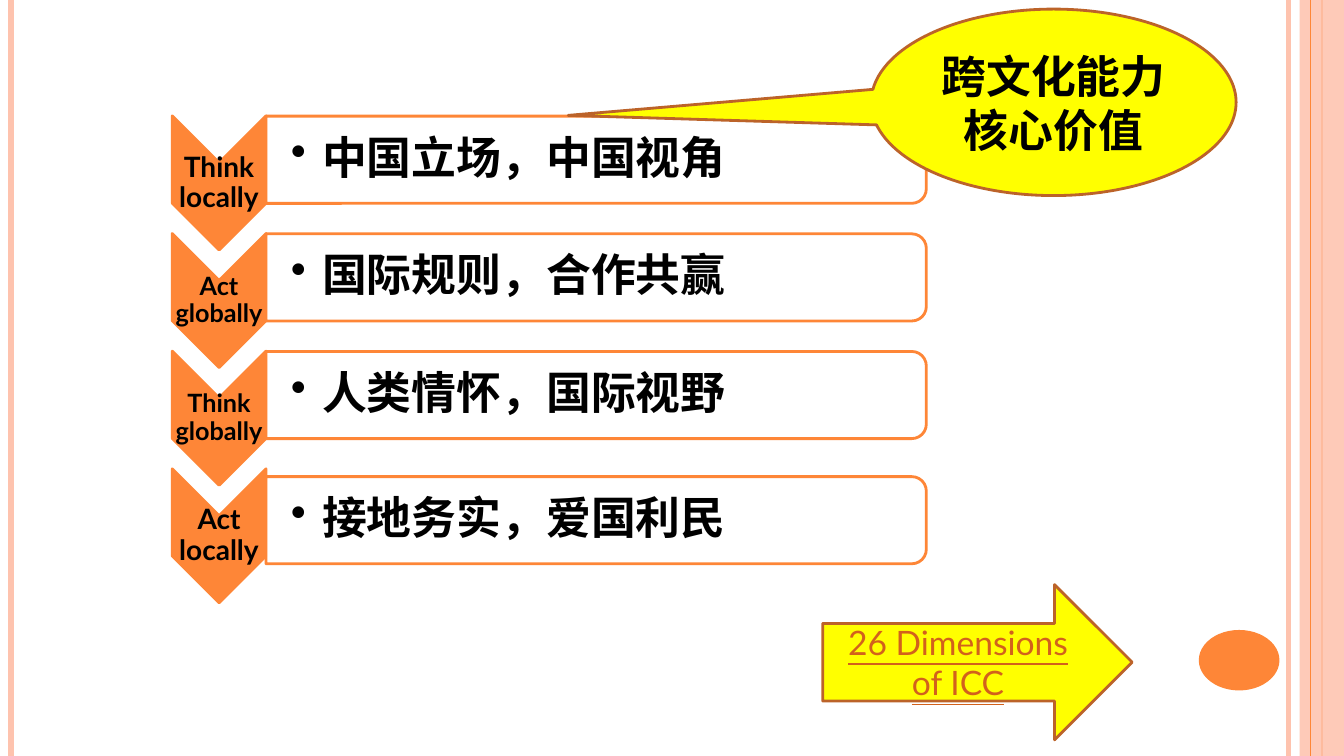
"""Build a slide of four think/act principles with a callout and an arrow."""
from lxml import etree
from pptx import Presentation
from pptx import util as u
from pptx.dml.color import RGBColor
from pptx.enum import shapes, text
from pptx.oxml.ns import qn

COLORS = {
    "orange": "FE8637", "peach": "FEC3AE", "white": "FFFFFF", "yellow": "FFFF00",
    "brown": "BC6329", "rust": "D2611C", "black": "000000",
}
CJK = "Noto Sans CJK SC"
KIND = shapes.MSO_SHAPE

deck = Presentation()
deck.slide_width, deck.slide_height = u.Inches(13.33), u.Inches(7.5)
page = deck.slides.add_slide(deck.slide_layouts[6])
CELL = deck.slide_height / 75
COLUMNS, ROWS = 133.3, 75


def draw(kind, left, top, width, height, fill, line=None, alpha=100):
    """Add a preset shape placed in grid cells."""
    shape = page.shapes.add_shape(kind, *(round(n * CELL) for n in (left, top, width, height)))
    shape.shadow.inherit = False
    shape.fill.solid()
    shape.fill.fore_color.rgb = RGBColor.from_string(COLORS[fill])
    if alpha < 100:
        color = shape.fill._xPr.find(qn("a:solidFill"))[0]
        etree.SubElement(color, qn("a:alpha")).set("val", str(alpha * 1000))
    if line:
        shape.line.color.rgb = RGBColor.from_string(COLORS[line])
        shape.line.width = u.Pt(2)
    else:
        shape.line.fill.background()
    return shape


def write(box, words, size, font, color="black", bold=True, align=text.PP_ALIGN.CENTER):
    """Fill a shape with one formatted paragraph and return the paragraph."""
    frame = box.text_frame
    frame.text = words
    frame.word_wrap = True
    frame.vertical_anchor = text.MSO_ANCHOR.MIDDLE
    para = frame.paragraphs[0]
    para.alignment = align
    span = para.runs[0]
    span.font.size, span.font.name, span.font.bold = u.Pt(size), font, bold
    span.font.color.rgb = RGBColor.from_string(COLORS[color])
    etree.SubElement(span.font._element, qn("a:ea")).set("typeface", CJK)
    return para


stripes = [
    (127.8, "peach", 3), (1.1, "peach", 4.5), (131.1, "orange", 1.5), (130, "orange", 0.75),
]
for column, color, weight in stripes:
    x = round(column * CELL)
    stripe = page.shapes.add_connector(
        shapes.MSO_CONNECTOR.STRAIGHT, x, 0, x, deck.slide_height)
    stripe.line.color.rgb = RGBColor.from_string(COLORS[color])
    stripe.line.width = u.Pt(weight)
    etree.SubElement(stripe._element.spPr, qn("a:effectLst"))
    if color == "orange" and weight > 1:
        draw(KIND.RECTANGLE, 128.9, 0, COLUMNS - 128.9, ROWS, "peach", alpha=87)
draw(KIND.OVAL, 118.9, 62.5, 8, 6, "orange")

principles = [
    ("Think locally", 20, "中国立场，中国视角", 0),
    ("Act globally", 18, "国际规则，合作共赢", 0),
    ("Think globally", 18, "人类情怀，国际视野", 0),
    ("Act locally", 20, "接地务实，爱国利民", 0.75),
]
for row, (label, size, principle, drop) in enumerate(principles):
    top = 11.5 + row * 11.67
    chevron = draw(KIND.CHEVRON, 15.08, top + 2, 13.3, 9.3, "orange", "orange")
    chevron.rotation = 90
    label_box = page.shapes.add_textbox(
        *(round(n * CELL) for n in (17.08, top + 4.67, 9.3, 4)))
    panel = draw(KIND.ROUND_2_SAME_RECTANGLE, 54.8, top - 28.4 + drop, 8.65, 65.5,
                 "white", "orange", 90)
    panel.rotation = 90
    panel_box = page.shapes.add_textbox(
        *(round(n * CELL) for n in (26.35, top + 0.45 + drop, 65.1, 7.8)))
    for box, inset, left in ((label_box, 0.01, 0.01), (panel_box, 0.02, 0.25)):
        frame = box.text_frame
        frame.margin_top = frame.margin_bottom = frame.margin_right = u.Inches(inset)
        frame.margin_left = u.Inches(left)
    write(label_box, label, size, "Lato").line_spacing = 0.9
    para = write(panel_box, principle, 32, CJK, align=text.PP_ALIGN.LEFT)
    para.line_spacing = 0.9
    properties = para._p.get_or_add_pPr()
    properties.set("marL", str(u.Inches(0.31)))
    properties.set("indent", str(-u.Inches(0.31)))
    etree.SubElement(properties, qn("a:buChar")).set("char", "•")

callout = draw(KIND.OVAL_CALLOUT, 86.4, 0.9, 36.2, 18.5, "yellow", "brown")
callout.adjustments[0], callout.adjustments[1] = -1.33, 0.07
write(callout, "跨文化能力核心价值", 32, "Courier New")

arrow = draw(KIND.RIGHT_ARROW, 81.6, 58, 30.7, 15.4, "yellow", "brown")
write(arrow, "26 Dimensions of ICC", 24, "Lato", "rust", False).runs[0].font.underline = True

deck.save("out.pptx")
